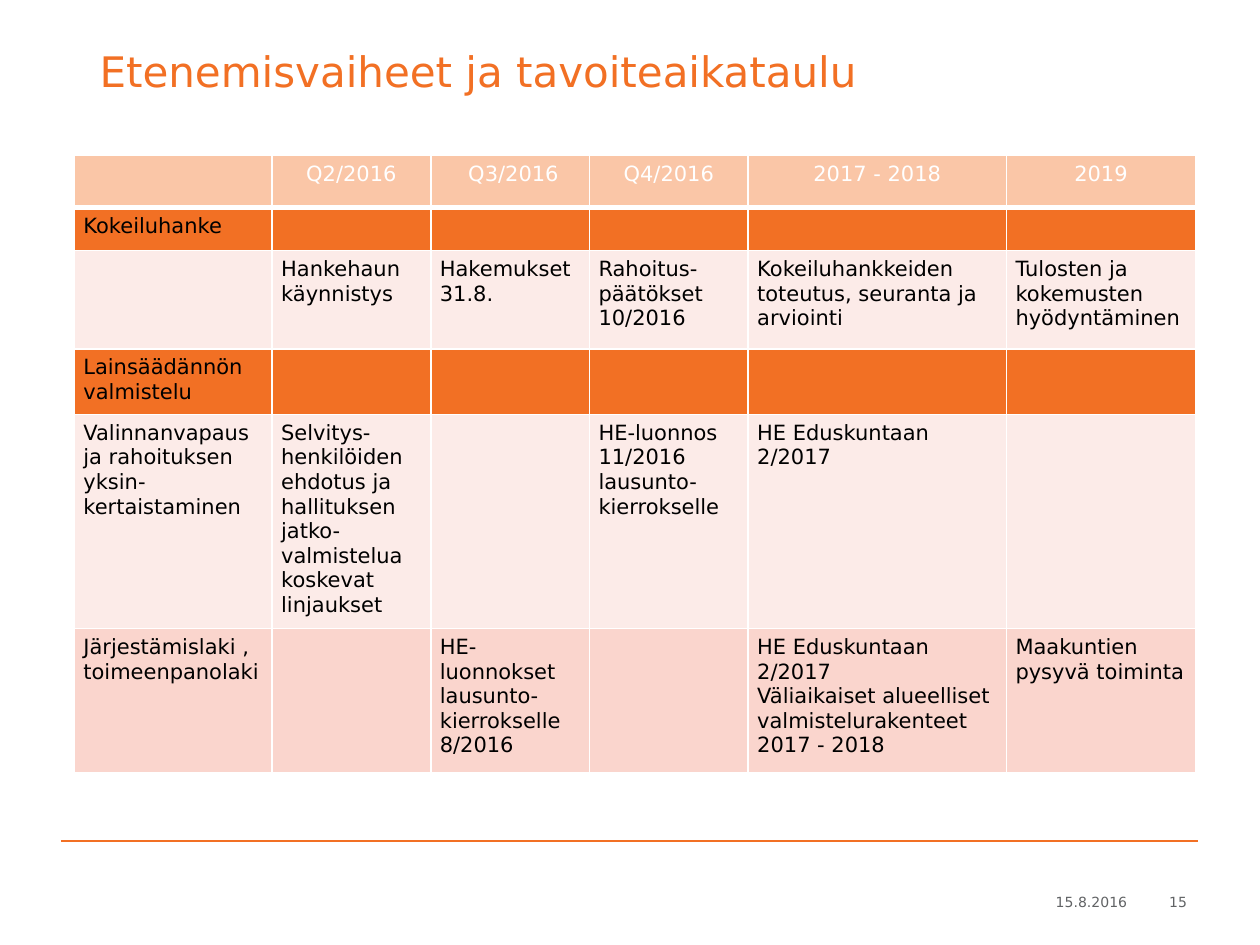
from dataclasses import dataclass

from lxml import etree
from pptx import Presentation
from pptx.dml.color import RGBColor
from pptx.enum.shapes import MSO_CONNECTOR
from pptx.enum.text import MSO_ANCHOR, PP_ALIGN
from pptx.oxml.ns import qn
from pptx.util import Pt

STRAIGHT = MSO_CONNECTOR.STRAIGHT
LEFT, CENTER = PP_ALIGN.LEFT, PP_ALIGN.CENTER
TOP, MIDDLE = MSO_ANCHOR.TOP, MSO_ANCHOR.MIDDLE

FONT = "DejaVu Sans"
ORANGE, PEACH, PALE, PINK = "F27024", "FAC6A7", "FCEBE8", "FAD5CD"
WHITE, BLACK, GREY = "FFFFFF", "000000", "616365"


@dataclass
class Row:
    height: float
    fill: str
    texts: list[str]
    color: str = BLACK
    align: PP_ALIGN = LEFT
    bottom: float = 1


COL_WIDTHS = [113, 90.7, 90.7, 90.7, 147.6, 108]
ROWS = [
    Row(30, PEACH, ["", "Q2/2016", " Q3/2016", "Q4/2016", "2017 - 2018", "2019"],
        WHITE, CENTER, 3),
    Row(24.5, ORANGE, ["Kokeiluhanke", "", "", "", "", ""]),
    Row(56.2, PALE, ["", "Hankehaun käynnistys", "Hakemukset 31.8.",
                     "Rahoitus-päätökset 10/2016",
                     "Kokeiluhankkeiden toteutus, seuranta ja arviointi",
                     "Tulosten ja kokemusten hyödyntäminen"]),
    Row(37.5, ORANGE, ["Lainsäädännön valmistelu", "", "", "", "", ""]),
    Row(120.5, PALE, ["Valinnanvapaus ja rahoituksen yksin-kertaistaminen",
                      "Selvitys-henkilöiden ehdotus ja hallituksen "
                      "jatko-valmistelua koskevat linjaukset", "",
                      "HE-luonnos 11/2016 lausunto-kierrokselle",
                      "HE Eduskuntaan 2/2017", ""]),
    Row(82.5, PINK, ["Järjestämislaki , toimeenpanolaki", "",
                     "HE-luonnokset lausunto-kierrokselle 8/2016", "",
                     "HE Eduskuntaan 2/2017\nVäliaikaiset alueelliset "
                     "valmistelurakenteet 2017 - 2018",
                     "Maakuntien pysyvä toiminta"]),
]


def rgb(value: str) -> RGBColor:
    return RGBColor.from_string(value)


def format_text(tf, size: float, color: str, align: PP_ALIGN = LEFT) -> None:
    for p in tf.paragraphs:
        p.alignment = align
        p.font.name = FONT
        p.font.size = Pt(size)
        p.font.color.rgb = rgb(color)
        if not p.runs:  # keeps empty cells from stretching their row
            p._p.get_or_add_endParaRPr().set("sz", str(size * 100))


def add_borders(cell, bottom: float) -> None:
    tc_pr = cell._tc.get_or_add_tcPr()
    for side, width in (("L", 1), ("R", 1), ("T", 1), ("B", bottom)):
        ln = etree.SubElement(tc_pr, qn(f"a:ln{side}"), w=str(int(Pt(width))))
        fill = etree.SubElement(ln, qn("a:solidFill"))
        etree.SubElement(fill, qn("a:srgbClr"), val=WHITE)


def add_schedule(s) -> None:
    frame = s.shapes.add_table(len(ROWS), len(COL_WIDTHS), Pt(42.5), Pt(88.7),
                               Pt(sum(COL_WIDTHS)), Pt(sum(r.height for r in ROWS)))
    table = frame.table
    table.first_row = table.horz_banding = False
    for column, width in zip(table.columns, COL_WIDTHS):
        column.width = Pt(width)
    for table_row, row in zip(table.rows, ROWS):
        table_row.height = Pt(row.height)
        for cell, text in zip(table_row.cells, row.texts):
            add_borders(cell, row.bottom)
            cell.fill.solid()
            cell.fill.fore_color.rgb = rgb(row.fill)
            cell.margin_left = cell.margin_right = Pt(5.2)
            cell.margin_top = cell.margin_bottom = Pt(3.6)
            cell.text = text
            format_text(cell.text_frame, 12, row.color, row.align)


def add_footer_text(s, left: float, text: str) -> None:
    sp = s.shapes.add_textbox(Pt(left), Pt(507), Pt(64), Pt(29))
    tf = sp.text_frame
    tf.word_wrap = True
    tf.vertical_anchor = TOP
    tf.text = text
    format_text(tf, 8, GREY)


def add_rule(s) -> None:
    line = s.shapes.add_connector(STRAIGHT, Pt(34.8), Pt(480.4), Pt(684.6), Pt(480.4))
    line.line.color.rgb = rgb(ORANGE)
    line.line.width = Pt(1)
    etree.SubElement(line._element.spPr, qn("a:effectLst"))


def add_title(s, text: str) -> None:
    sp = s.shapes.title
    sp.left, sp.top, sp.width, sp.height = Pt(49.7), Pt(13), Pt(620.6), Pt(54.7)
    tf = sp.text_frame
    tf.text = text
    tf.vertical_anchor = MIDDLE
    format_text(tf, 24, ORANGE)


def main() -> None:
    prs = Presentation()
    prs.slide_width, prs.slide_height = Pt(720), Pt(540)
    s = prs.slides.add_slide(prs.slide_layouts[5])
    add_footer_text(s, 596.2, "15.8.2016")
    add_footer_text(s, 661, "15")
    add_rule(s)
    add_title(s, "Etenemisvaiheet ja tavoiteaikataulu")
    add_schedule(s)
    prs.save("out.pptx")


if __name__ == "__main__":
    main()
